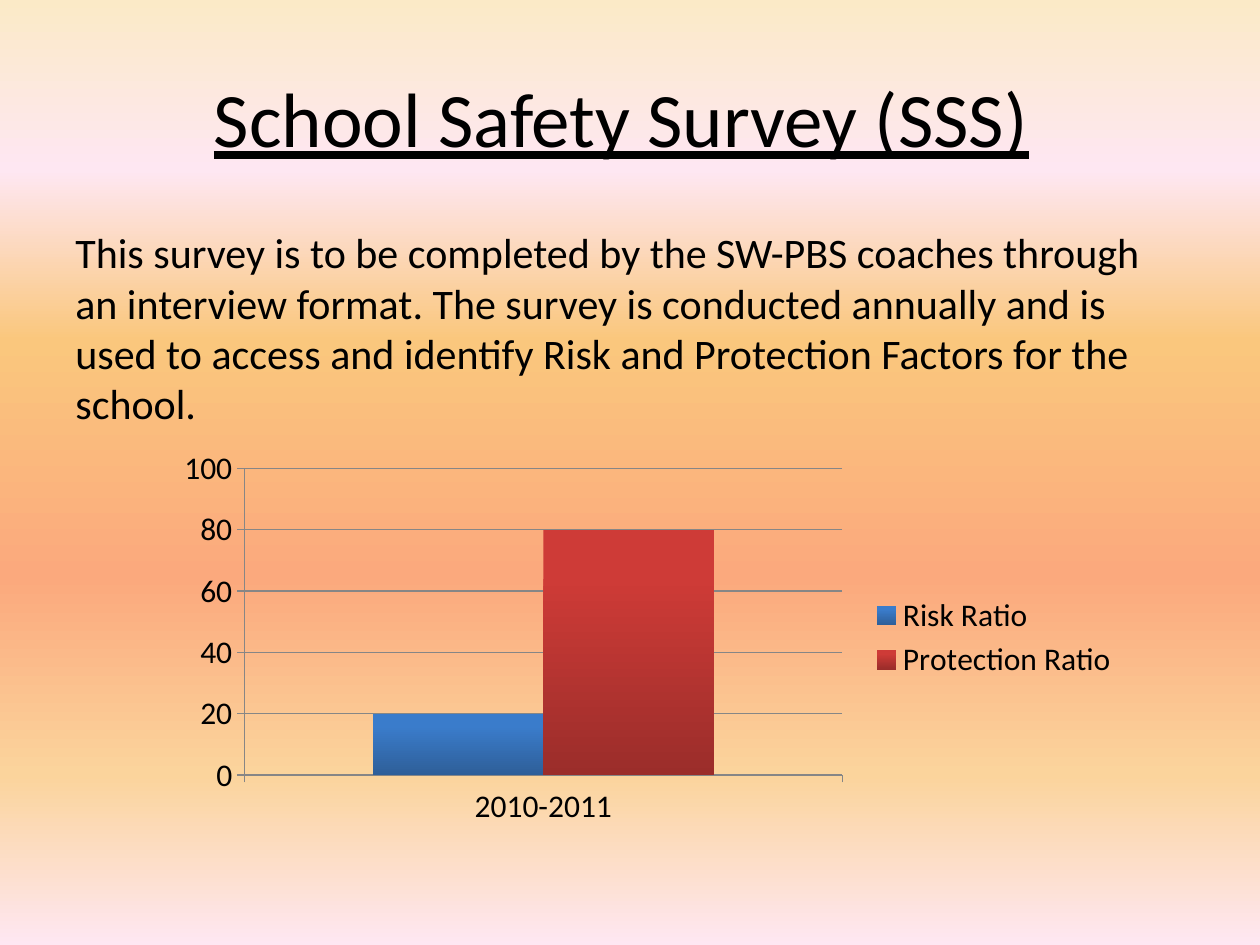
from pptx import Presentation
from pptx.chart.data import CategoryChartData
from pptx.dml.color import RGBColor
from pptx.enum.chart import XL_CHART_TYPE, XL_LEGEND_POSITION, XL_TICK_MARK
from pptx.enum.text import MSO_ANCHOR, PP_ALIGN
from pptx.oxml import parse_xml
from pptx.oxml.ns import nsdecls, qn
from pptx.util import Pt

COLORS = {
    "text": "000000", "grid": "868686",
    "cream": "FBEAC7", "pink": "FEE7F2", "gold": "FAC77D",
    "coral": "FBA97D", "sand": "FBD49C",
    "risk_top": "3A7CCB", "risk_bottom": "2E5F99",
    "protection_top": "CE3B37", "protection_bottom": "9B2D2A",
}
SKY = [(0, "cream"), (18, "pink"), (36, "gold"),
       (61, "coral"), (82, "sand"), (100, "pink")]
SERIES = [("Risk Ratio", 20, "risk"), ("Protection Ratio", 80, "protection")]
PLOT = {"x": 0.08, "y": 0.07, "w": 0.62, "h": 0.78}


def color(name):
    return RGBColor.from_string(COLORS[name])


def set_all(target, values):
    for name, value in values.items():
        setattr(target, name, value)


def set_font(font, size, **extra):
    set_all(font, {"name": "Calibri", "size": Pt(size), **extra})
    font.color.rgb = color("text")


def gradient(fill, stops):
    fill.gradient()
    element = fill._fill._gradFill
    for child in list(element):
        element.remove(child)
    marks = "".join(
        f'<a:gs pos="{position * 1000}"><a:srgbClr val="{COLORS[name]}"/></a:gs>'
        for position, name in stops)
    element.append(parse_xml(f'<a:gsLst {nsdecls("a")}>{marks}</a:gsLst>'))
    element.append(parse_xml(f'<a:lin {nsdecls("a")} ang="5400000" scaled="0"/>'))


def place(shape, box):
    set_all(shape, dict(zip(("left", "top", "width", "height"), map(Pt, box))))


def add_title(page, box):
    title = page.shapes.title
    place(title, box)
    title.text_frame.vertical_anchor = MSO_ANCHOR.MIDDLE
    para = title.text_frame.paragraphs[0]
    para.alignment = PP_ALIGN.CENTER
    for text, underline in (("School Safety Survey (SSS)", True), (" ", False)):
        span = para.add_run()
        span.text = text
        set_font(span.font, 44, underline=underline)


def add_description(page, box):
    frame = page.shapes.add_textbox(*map(Pt, box)).text_frame
    frame.word_wrap = True
    span = frame.paragraphs[0].add_run()
    span.text = (
        "This survey is to be completed by the SW-PBS coaches through an "
        "interview format. The survey is conducted annually and is used to "
        "access and identify Risk and Protection Factors for the school.")
    set_font(span.font, 24)


def set_plot_layout(chart):
    area = chart._chartSpace.chart.plotArea
    for layout in area.findall(qn("c:layout")):
        area.remove(layout)
    modes = "".join(f'<c:{side}Mode val="edge"/>' for side in "xy")
    parts = "".join(f'<c:{key} val="{value}"/>' for key, value in PLOT.items())
    area.insert(0, parse_xml(
        f'<c:layout {nsdecls("c")}><c:manualLayout><c:layoutTarget val="inner"/>'
        f'{modes}{parts}</c:manualLayout></c:layout>'))


def add_ratio_chart(page, box):
    data = CategoryChartData()
    data.categories = ["2010-2011"]
    for name, value, _ in SERIES:
        data.add_series(name, [value])
    chart = page.shapes.add_chart(
        XL_CHART_TYPE.COLUMN_CLUSTERED, *map(Pt, box), data).chart
    set_font(chart.font, 18)
    set_all(chart, {"has_title": False, "has_legend": True})
    set_all(chart.legend, {"position": XL_LEGEND_POSITION.RIGHT,
                           "include_in_layout": False})
    set_all(chart.plots[0], {"gap_width": 150, "overlap": 0,
                             "vary_by_categories": False})
    set_all(chart.value_axis, {"minimum_scale": 0, "maximum_scale": 100,
                               "major_unit": 20, "has_major_gridlines": True})
    for axis in (chart.category_axis, chart.value_axis):
        axis.major_tick_mark = XL_TICK_MARK.OUTSIDE
    for owner in (chart.category_axis, chart.value_axis,
                  chart.value_axis.major_gridlines):
        owner.format.line.color.rgb = color("grid")
        owner.format.line.width = Pt(0.75)
    for series, (_, _, key) in zip(chart.plots[0].series, SERIES):
        series.invert_if_negative = False
        gradient(series.format.fill,
                 [(0, f"{key}_top"), (20, f"{key}_top"), (100, f"{key}_bottom")])
    set_plot_layout(chart)


def main():
    deck = Presentation()
    set_all(deck, {"slide_width": Pt(720), "slide_height": Pt(540)})
    page = deck.slides.add_slide(deck.slide_layouts[5])
    gradient(page.background.fill, SKY)
    add_title(page, (36, 21.6, 648, 90))
    add_description(page, (36, 126, 648, 356.4))
    add_ratio_chart(page, (95.76, 252, 550.8, 224.64))
    deck.save("out.pptx")


if __name__ == "__main__":
    main()
